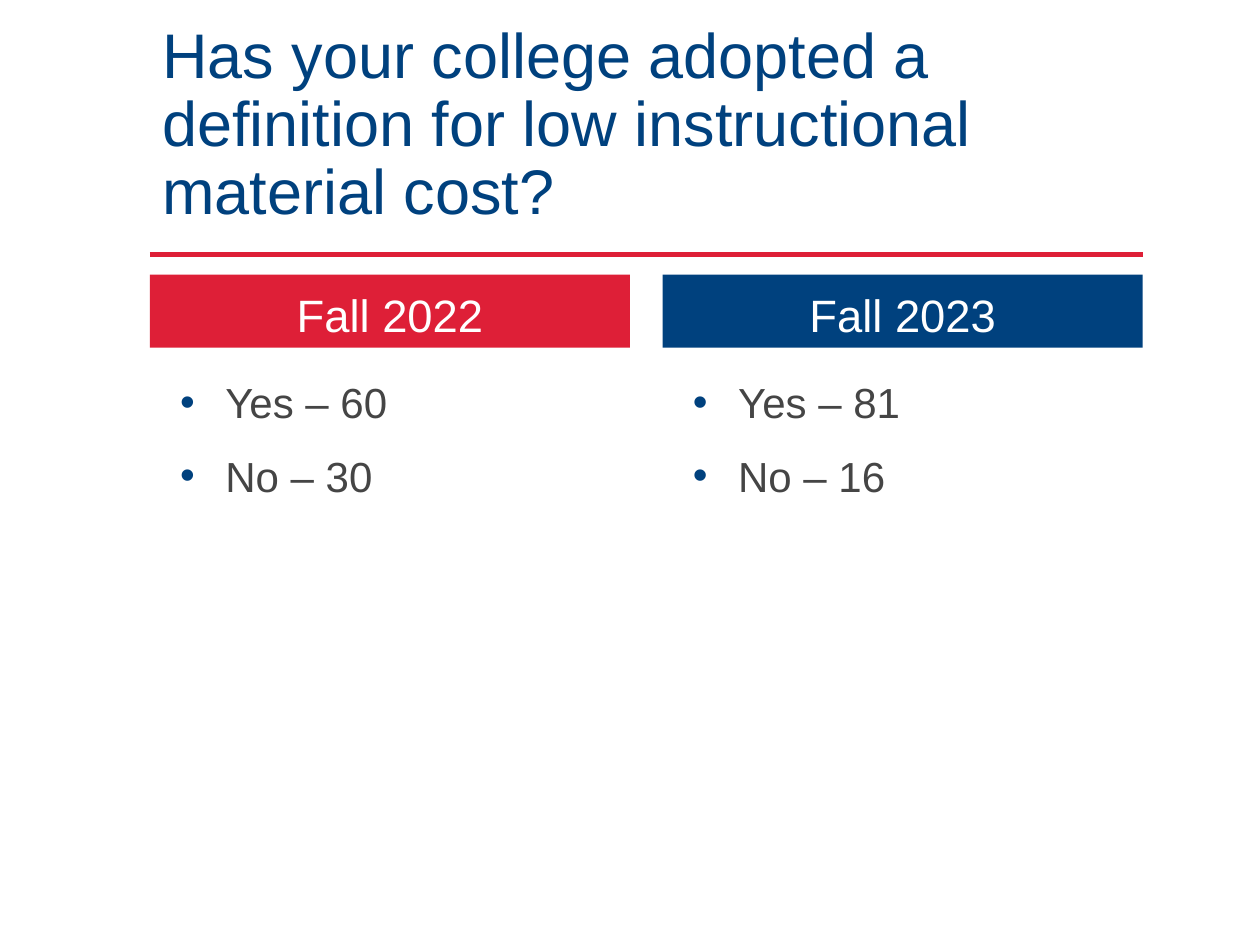
from lxml.etree import SubElement
from pptx import Presentation
from pptx.dml.color import RGBColor
from pptx.enum.shapes import MSO_CONNECTOR, MSO_SHAPE
from pptx.enum.text import MSO_ANCHOR, PP_ALIGN
from pptx.oxml.ns import qn
from pptx.util import Inches, Pt

COLORS = {"red": "DE1F37", "blue": "00417E", "gray": "454545", "white": "FFFFFF"}
LEFT, WIDTH = 1.19, 7.88
COLUMN_WIDTH = 3.81
COLUMNS = [
    ("Fall 2022", "red", ["Yes – 60", "No – 30"]),
    ("Fall 2023", "blue", ["Yes – 81", "No – 16"]),
]
TITLE_FORMAT = {"line_spacing": 0.9}
HEADER_FORMAT = {"alignment": PP_ALIGN.CENTER, "line_spacing": 0.8, "space_before": Pt(7.5)}
ANSWER_FORMAT = {"line_spacing": 1.2, "space_before": Pt(7.5)}


def color(name):
    return RGBColor.from_string(COLORS[name])


def write(box, lines, size, ink, para_format, anchor):
    frame = box.text_frame
    frame.word_wrap = True
    frame.vertical_anchor = anchor
    frame.text = "\n".join(lines)
    for para in frame.paragraphs:
        for key, value in para_format.items():
            setattr(para, key, value)
        for span in para.runs:
            for key, value in {"name": "Arial", "size": Pt(size)}.items():
                setattr(span.font, key, value)
            span.font.color.rgb = color(ink)


def add_bullet(para, name):
    # Hanging indent with a coloured bullet
    properties = para._p.get_or_add_pPr()
    properties.set("marL", str(Inches(0.5)))
    properties.set("indent", str(Inches(-0.36)))
    bullet_color = SubElement(properties, qn("a:buClr"))
    SubElement(bullet_color, qn("a:srgbClr"), val=COLORS[name])
    SubElement(properties, qn("a:buFont"), typeface="Arial")
    SubElement(properties, qn("a:buChar"), char="•")


def add_title(page, left, top, width, height):
    box = page.shapes.add_textbox(Inches(left), Inches(top), Inches(width), Inches(height))
    question = "Has your college adopted a definition for low instructional material cost?"
    write(box, [question], 36, "blue", TITLE_FORMAT, MSO_ANCHOR.BOTTOM)

    # Rule below the title
    rule_top = Inches(top + height + 0.16)
    rule = page.shapes.add_connector(
        MSO_CONNECTOR.STRAIGHT, Inches(left), rule_top, Inches(left + width), rule_top)
    rule.line.color.rgb = color("red")
    rule.line.width = Pt(2.5)
    SubElement(rule._element.spPr, qn("a:effectLst"))


def add_column(page, left, top, width, heading, fill, answers):
    # Header band
    band = page.shapes.add_shape(
        MSO_SHAPE.RECTANGLE, Inches(left), Inches(top), Inches(width), Inches(0.58))
    band.shadow.inherit = False
    band.fill.solid()
    band.fill.fore_color.rgb = color(fill)
    band.line.fill.background()
    write(band, [heading], 25.9, "white", HEADER_FORMAT, MSO_ANCHOR.BOTTOM)

    # Answer counts
    box = page.shapes.add_textbox(
        Inches(left), Inches(top + 0.68), Inches(width), Inches(3.75))
    write(box, answers, 24, "gray", ANSWER_FORMAT, MSO_ANCHOR.TOP)
    for para in box.text_frame.paragraphs:
        add_bullet(para, "blue")


def main():
    deck = Presentation()
    deck.slide_width, deck.slide_height = Inches(10), Inches(7.5)
    page = deck.slides.add_slide(deck.slide_layouts[6])
    add_title(page, LEFT, 0.88, WIDTH, 0.98)
    step = WIDTH - COLUMN_WIDTH
    for index, column in enumerate(COLUMNS):
        add_column(page, LEFT + index * step, 2.18, COLUMN_WIDTH, *column)
    deck.save("out.pptx")


if __name__ == "__main__":
    main()
